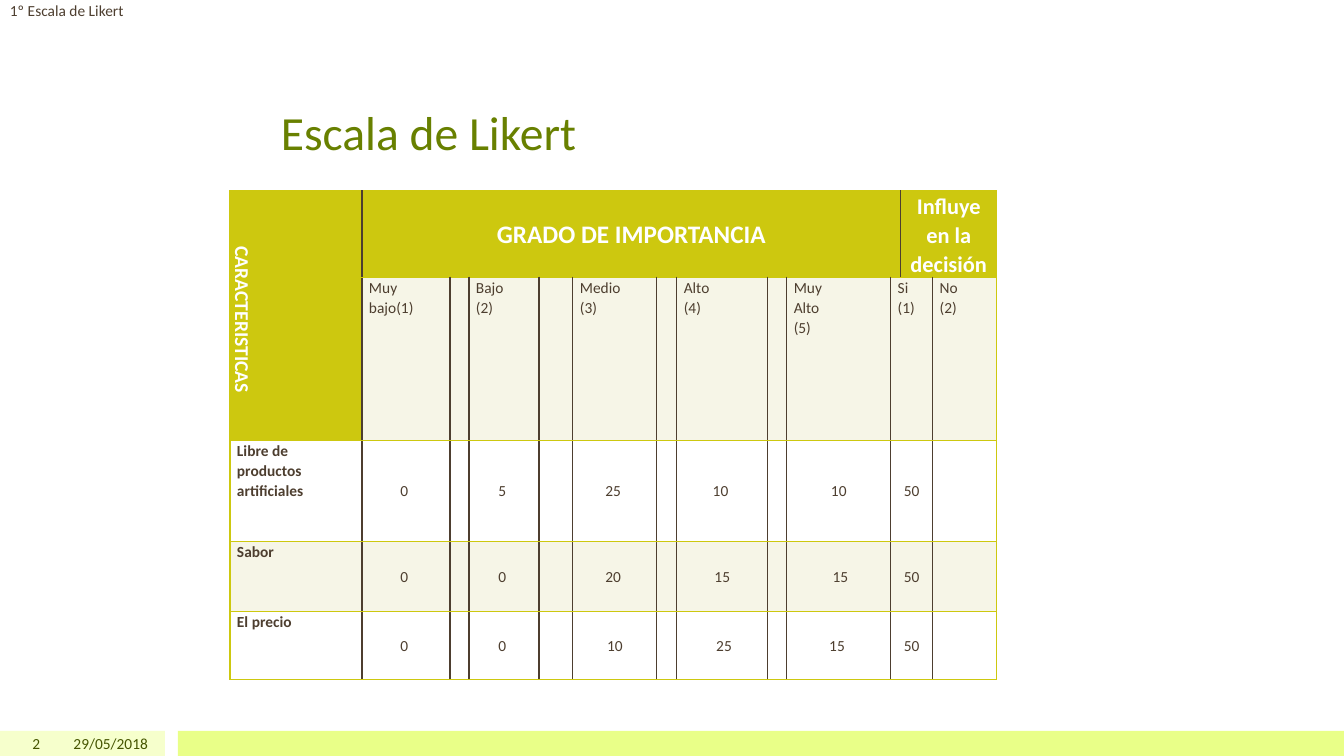
from lxml.etree import SubElement
from pptx import Presentation
from pptx.dml.color import RGBColor
from pptx.enum.shapes import MSO_SHAPE as Shape
from pptx.enum.text import MSO_ANCHOR as Anchor, PP_ALIGN as Align
from pptx.oxml.ns import qn
from pptx.util import Pt

SCALE = 914400 / 100.8  # EMU per px
COLORS = {
    "pale": "F6FFCC", "lime": "E9FF88", "title": "688000", "footer": "455500",
    "brown": "4D3E2F", "green": "CDC80F", "cream": "F6F5E7", "white": "FFFFFF",
}


def px(*lengths):
    return [round(length * SCALE) for length in lengths]


def write(frame, lines, size, color, bold=False, align=Align.LEFT, spacing=1.0):
    frame.word_wrap = True
    for number, line in enumerate(lines):
        para = frame.add_paragraph() if number else frame.paragraphs[0]
        para.alignment, para.line_spacing = align, spacing
        span = para.add_run()
        span.text = line
        look = {"name": "Calibri", "size": Pt(size), "bold": bold}
        for key, value in look.items():
            setattr(span.font, key, value)
        span.font.color.rgb = RGBColor.from_string(COLORS[color])


deck = Presentation()
deck.slide_width, deck.slide_height = px(1344, 756)
page = deck.slides.add_slide(deck.slide_layouts[6])

# Footer bars
for left, width, color in [(0, 165, "pale"), (178, 1166, "lime")]:
    bar = page.shapes.add_shape(Shape.RECTANGLE, *px(left, 731, width, 25))
    bar.shadow.inherit = False
    bar.fill.solid()
    bar.fill.fore_color.rgb = RGBColor.from_string(COLORS[color])
    bar.line.fill.background()

# Title, footer texts and top caption
texts = [
    ("Escala de Likert", (155, 30, 1033, 130), 34, "title", Align.LEFT, Anchor.BOTTOM, 0),
    ("2", (0, 731, 50, 25), 11, "footer", Align.RIGHT, Anchor.MIDDLE, 0),
    ("29/05/2018", (55, 731, 103, 25), 11, "footer", Align.RIGHT, Anchor.MIDDLE, 0),
    ("1º Escala de Likert", (0, 0, 1344, 50), 11, "brown", Align.LEFT, Anchor.TOP, 1),
]
for text, place, size, color, align, anchor, inset in texts:
    box = page.shapes.add_textbox(*px(*place))
    frame = box.text_frame
    frame.vertical_anchor = anchor
    frame.margin_top = frame.margin_bottom = px(inset)[0]
    if color == "title":
        frame.margin_left = px(126)[0]
    write(frame, [text], size, color, align=align)

# Table grid
widths = [132, 88, 19, 70, 34, 84, 20, 91, 19, 104, 10, 32, 64]
heights = [86, 163, 101, 70, 68]
table = page.shapes.add_table(
    len(heights), len(widths), *px(230, 191, sum(widths), sum(heights))).table
table.first_row = table.horz_banding = False
for column, width in zip(table.columns, px(*widths)):
    column.width = width
for row, height in zip(table.rows, px(*heights)):
    row.height = height
merges = [(0, 0, 1, 0), (0, 1, 0, 10), (0, 11, 0, 12)]
merges += [(row, 10, row, 11) for row in range(1, len(heights))]
for top, left, bottom, right in merges:
    table.cell(top, left).merge(table.cell(bottom, right))

# Cell contents by column
contents = [
    {0: "CARACTERISTICAS", 1: "GRADO DE IMPORTANCIA", 11: "Influye en la decisión"},
    {1: "Muy bajo(1)", 3: "Bajo\n(2)", 5: "Medio\n(3)", 7: "Alto\n(4)",
     9: "Muy\nAlto\n(5)", 10: "Si\n(1)", 12: "No\n(2)"},
    {0: "Libre de productos artificiales",
     1: "0 ", 3: "5 ", 5: "25 ", 7: "10 ", 9: "10", 10: "50"},
    {0: "Sabor", 1: "0 ", 3: "0 ", 5: "20 ", 7: "15", 9: " 15", 10: "50"},
    {0: "El precio", 1: "0 ", 3: "0 ", 5: "10", 7: " 25", 9: "15 ", 10: "50"},
]
fills = ["green", "cream", "white", "cream", "white"]
header_sizes = {0: 14, 1: 18, 11: 16}
last = len(widths) - 1

for row, entries in enumerate(contents):
    for column in range(len(widths)):
        cell = table.cell(row, column)
        if cell.is_spanned:
            continue
        is_header = row == 0
        centred = is_header or (row > 1 and column > 0)
        cell.margin_left = cell.margin_right = px(7)[0]
        cell.margin_top = cell.margin_bottom = 0
        cell.vertical_anchor = Anchor.MIDDLE if centred else Anchor.TOP
        if column in entries:
            write(cell.text_frame, entries[column].split("\n"),
                  header_sizes[column] if is_header else 11,
                  "white" if is_header else "brown",
                  bold=is_header or column == 0,
                  align=Align.CENTER if centred else Align.LEFT, spacing=1.07)

        # Borders: brown between columns, green elsewhere
        properties = cell._tc.get_or_add_tcPr()
        right_edge = column + cell.span_width - 1 if cell.is_merge_origin else column
        edges = {
            "a:lnL": "brown" if column else "green",
            "a:lnR": "green" if right_edge == last else "brown",
            "a:lnT": "green",
            "a:lnB": "green",
        }
        for tag, color in edges.items():
            line = SubElement(properties, qn(tag), w=str(Pt(1)))
            solid = SubElement(line, qn("a:solidFill"))
            SubElement(solid, qn("a:srgbClr"), val=COLORS[color])
        cell.fill.solid()
        cell.fill.fore_color.rgb = RGBColor.from_string(COLORS[fills[row]])

# Vertical heading
heading = table.cell(0, 0)
heading._tc.get_or_add_tcPr().set("vert", "vert")
heading.text_frame.paragraphs[0]._p.get_or_add_pPr().set("marL", str(px(8)[0]))

deck.save("out.pptx")
